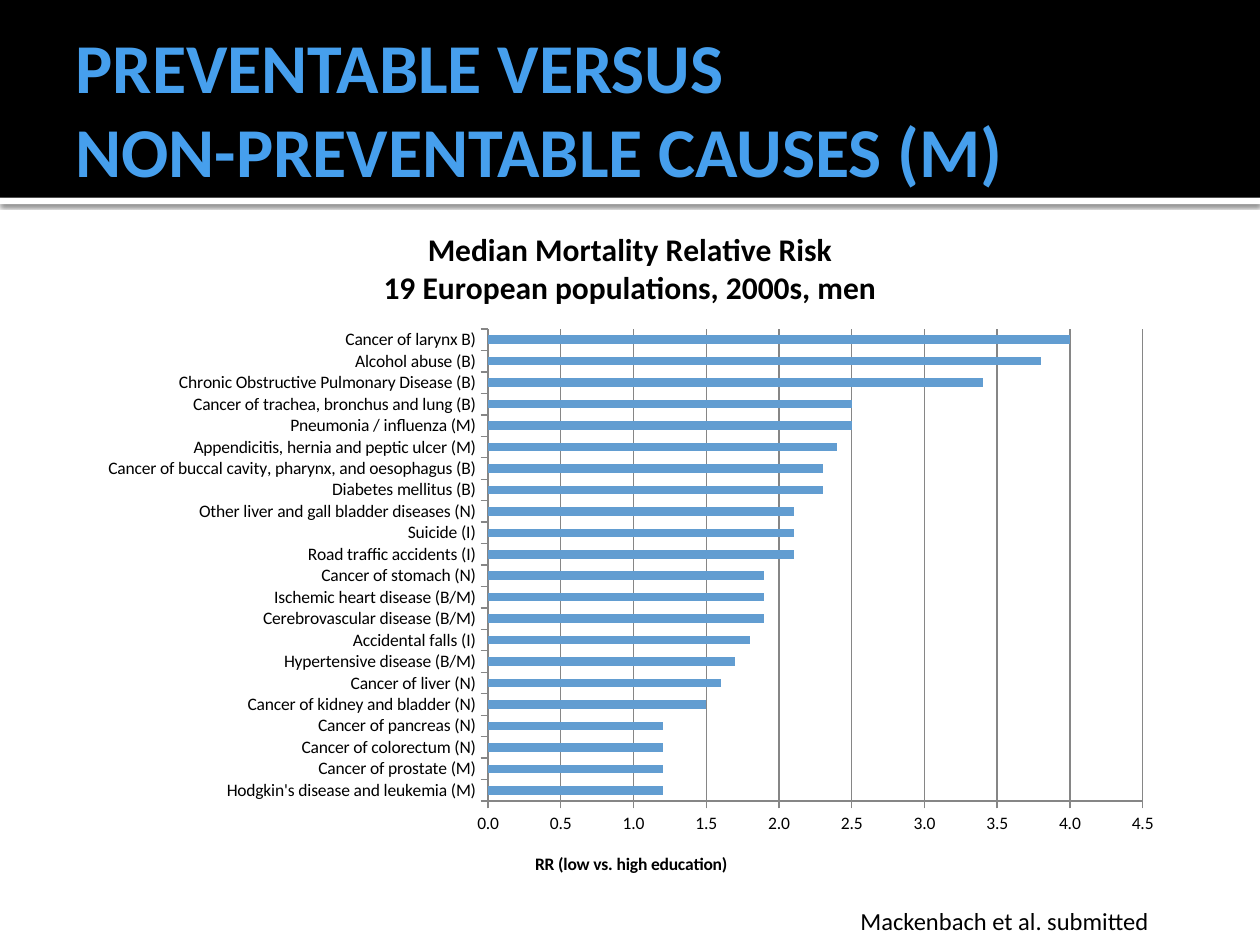
from lxml.etree import SubElement
from pptx import Presentation
from pptx.chart.data import CategoryChartData
from pptx.dml.color import RGBColor
from pptx.enum.chart import XL_CHART_TYPE, XL_TICK_LABEL_POSITION, XL_TICK_MARK
from pptx.enum.shapes import MSO_SHAPE
from pptx.enum.text import MSO_ANCHOR, MSO_AUTO_SIZE, PP_ALIGN
from pptx.oxml import parse_xml
from pptx.oxml.ns import nsdecls, qn
from pptx.util import Inches, Pt

# Content
TITLE = "PREVENTABLE VERSUS\vNON-PREVENTABLE CAUSES (M)"
CHART_TITLE = "Median Mortality Relative Risk\n19 European populations, 2000s, men"
AXIS_TITLE = "RR (low vs. high education)"
CITATION = "Mackenbach et al. submitted"
RISKS = [  # from the bottom bar to the top bar
    ("Hodgkin's disease and leukemia (M)", 1.2),
    ("Cancer of prostate (M)", 1.2),
    ("Cancer of colorectum (N)", 1.2),
    ("Cancer of pancreas (N)", 1.2),
    ("Cancer of kidney and bladder (N)", 1.5),
    ("Cancer of liver (N)", 1.6),
    ("Hypertensive disease (B/M)", 1.7),
    ("Accidental falls (I)", 1.8),
    ("Cerebrovascular disease (B/M)", 1.9),
    ("Ischemic heart disease (B/M)", 1.9),
    ("Cancer of stomach (N)", 1.9),
    ("Road traffic accidents (I)", 2.1),
    ("Suicide (I)", 2.1),
    ("Other liver and gall bladder diseases (N)", 2.1),
    ("Diabetes mellitus (B)", 2.3),
    ("Cancer of buccal cavity, pharynx, and oesophagus (B)", 2.3),
    ("Appendicitis, hernia and peptic ulcer (M)", 2.4),
    ("Pneumonia / influenza (M)", 2.5),
    ("Cancer of trachea, bronchus and lung (B)", 2.5),
    ("Chronic Obstructive Pulmonary Disease (B)", 3.4),
    ("Alcohol abuse (B)", 3.8),
    ("Cancer of larynx B)", 4.0),
]

# Formats
BLACK, WHITE, GRAY, BAR_BLUE, TITLE_BLUE = "000000", "FFFFFF", "868686", "629DD1", "469FED"
HEADER_HEIGHT = 1.57
TITLE_FORMAT = {"name": "Calibri", "size": Pt(40), "bold": True}
CITATION_FORMAT = {"name": "Calibri", "size": Pt(14), "bold": False}
CHART_FORMAT = {"name": "Calibri", "size": Pt(10), "bold": False}
CHART_TITLE_FORMAT = {"name": "Calibri", "size": Pt(18), "bold": True}
AXIS_TITLE_FORMAT = {"name": "Calibri", "size": Pt(10), "bold": True}
PLOT_LAYOUT = {"layoutTarget": "inner", "xMode": "edge", "yMode": "edge",
               "x": 0.37, "y": 0.18, "w": 0.6, "h": 0.68}
AXIS_TITLE_LAYOUT = {"xMode": "edge", "yMode": "edge", "x": 0.41, "y": 0.93}


def color(hex_value):
    return RGBColor.from_string(hex_value)


def format_font(font, values, hex_value=BLACK):
    for name, value in values.items():
        setattr(font, name, value)
    font.color.rgb = color(hex_value)


def place(shape, left, top, width, height):
    for name, value in zip(("left", "top", "width", "height"), (left, top, width, height)):
        setattr(shape, name, Inches(value))


def add_band(page, top, height, fill):
    band = page.shapes.add_shape(MSO_SHAPE.RECTANGLE, 0, Inches(top), Inches(10), Inches(height))
    band.shadow.inherit = False
    band.fill.solid()
    band.fill.fore_color.rgb = color(fill)
    band.line.fill.background()
    return band


def set_layout(element, position, values):
    """Give a chart part a manual position, in fractions of the chart."""
    for old in element.findall(qn("c:layout")):
        element.remove(old)
    layout = parse_xml(f"<c:layout {nsdecls('c')}/>")
    manual = SubElement(layout, qn("c:manualLayout"))
    for name, value in values.items():
        SubElement(manual, qn(f"c:{name}")).set("val", str(value))
    element.insert(position, layout)


def write_title(owner, text, values):
    frame = owner.text_frame
    frame.text = text
    for para in frame.paragraphs:
        for span in para.runs:
            format_font(span.font, values)


deck = Presentation()
deck.slide_width, deck.slide_height = Inches(10), Inches(7.5)
page = deck.slides.add_slide(deck.slide_layouts[5])

# Header: white strip with a shadow, under a black band
strip = add_band(page, HEADER_HEIGHT, 0.05, WHITE)
effects = strip._element.spPr.find(qn("a:effectLst"))
effects.append(parse_xml(
    f'<a:outerShdw {nsdecls("a")} blurRad="{Pt(2.5)}" dist="{Pt(0.8)}" dir="5400000" rotWithShape="0">'
    '<a:srgbClr val="000000"><a:alpha val="60000"/></a:srgbClr></a:outerShdw>'))
add_band(page, 0, HEADER_HEIGHT, BLACK)

# Title, brought in front of the bands
title = page.shapes.title
page.shapes._spTree.append(title._element)
place(title, 0.5, 0.17, 9, 1.37)
frame = title.text_frame
frame.text = TITLE
frame_format = {"margin_left": Inches(0.1), "margin_right": Inches(0.05),
                "margin_top": Inches(0.05), "margin_bottom": Inches(0.05),
                "vertical_anchor": MSO_ANCHOR.MIDDLE, "word_wrap": True,
                "auto_size": MSO_AUTO_SIZE.NONE}
for name, value in frame_format.items():
    setattr(frame, name, value)
para = frame.paragraphs[0]
para.alignment = PP_ALIGN.LEFT
for span in para.runs:
    format_font(span.font, TITLE_FORMAT, TITLE_BLUE)

# Bar chart
data = CategoryChartData(number_format="0.0")
data.categories = [cause for cause, risk in RISKS]
data.add_series("Series 1", [risk for cause, risk in RISKS])
chart = page.shapes.add_chart(XL_CHART_TYPE.BAR_CLUSTERED, Inches(0.67), Inches(1.62),
                              Inches(8.66), Inches(5.51), data).chart
format_font(chart.font, CHART_FORMAT)
chart.has_legend = False
chart.has_title = True
write_title(chart.chart_title, CHART_TITLE, CHART_TITLE_FORMAT)
chart.chart_title.include_in_layout = False

plot = chart.plots[0]
plot.gap_width = 150
plot.vary_by_categories = False
bars = plot.series[0].format.fill
bars.solid()
bars.fore_color.rgb = color(BAR_BLUE)

# Axes
causes, risks = chart.category_axis, chart.value_axis
for axis in (causes, risks):
    axis.major_tick_mark = XL_TICK_MARK.OUTSIDE
    axis.minor_tick_mark = XL_TICK_MARK.NONE
    axis.tick_label_position = XL_TICK_LABEL_POSITION.LOW
    axis.format.line.color.rgb = color(GRAY)
    axis.format.line.width = Pt(0.75)
causes.has_major_gridlines = False
risks.has_major_gridlines = True
risks.major_gridlines.format.line.color.rgb = color(GRAY)
risks.major_gridlines.format.line.width = Pt(0.75)
risks.minimum_scale, risks.maximum_scale, risks.major_unit = 0, 4.5, 0.5
risks.tick_labels.number_format = "#,##0.0"
risks.tick_labels.number_format_is_linked = False
write_title(risks.axis_title, AXIS_TITLE, AXIS_TITLE_FORMAT)
set_layout(risks.axis_title._element, 1, AXIS_TITLE_LAYOUT)
set_layout(chart._chartSpace.chart.plotArea, 0, PLOT_LAYOUT)

# Citation
box = page.shapes.add_textbox(Inches(6.73), Inches(7.14), Inches(2.99), Inches(0.34))
box.text_frame.word_wrap = True
box.text_frame.auto_size = MSO_AUTO_SIZE.SHAPE_TO_FIT_TEXT
box.text_frame.text = CITATION
format_font(box.text_frame.paragraphs[0].runs[0].font, CITATION_FORMAT)

deck.save("out.pptx")
